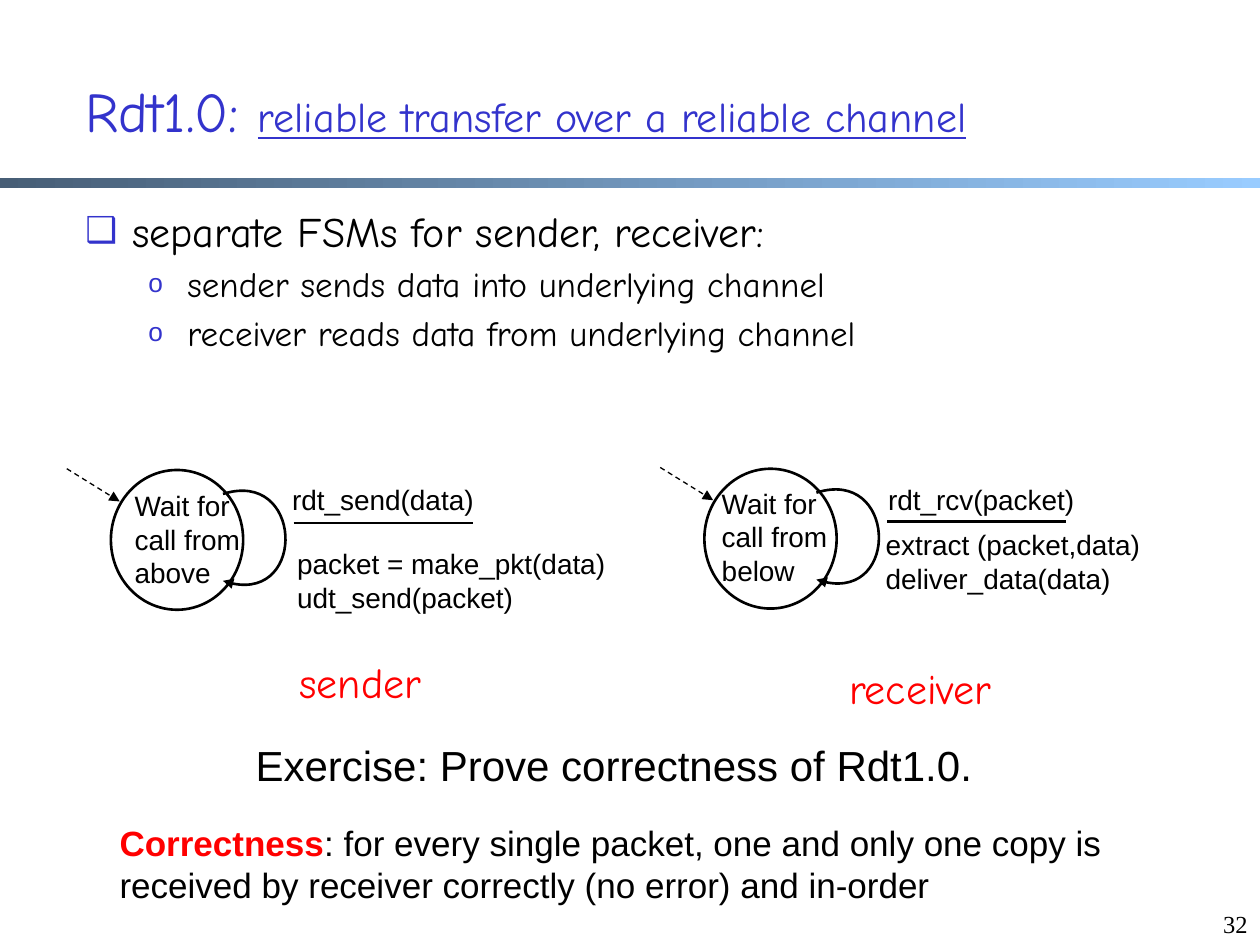
from lxml.etree import SubElement
from pptx import Presentation
from pptx.dml.color import RGBColor
from pptx.enum.dml import MSO_LINE
from pptx.enum.shapes import MSO_CONNECTOR, MSO_SHAPE
from pptx.enum.text import MSO_ANCHOR, PP_ALIGN
from pptx.oxml.ns import qn
from pptx.util import Pt

PX = 9144  # 100 px to the inch
BLACK, BLUE, RED, WHITE = "000000", "3333CC", "FF0000", "FFFFFF"
SANS, HAND, SERIF = "Arial", "Comic Neue", "Times New Roman"


def emu(*nums):
    return [n * PX for n in nums]


def color(hue):
    return RGBColor.from_string(hue)


def ink(run, size, hue=BLACK, face=SANS):
    font = run.font
    font.size, font.name = Pt(size), face
    font.color.rgb = color(hue)
    return font


def label(slide, box, text, size, hue=BLACK, face=SANS, wrap=True):
    frame = slide.shapes.add_textbox(*emu(*box)).text_frame
    frame.word_wrap = wrap
    frame.text = text
    for para in frame.paragraphs:
        for run in para.runs:
            ink(run, size, hue, face)
    return frame


def stroke(line, width, arrow=False, dash=False):
    line.color.rgb = color(BLACK)
    line.width = Pt(width)
    if dash:
        line.dash_style = MSO_LINE.DASH
    if arrow:
        SubElement(line._get_or_add_ln(), qn("a:tailEnd"), type="triangle")


def link(slide, ends, width, **style):
    wire = slide.shapes.add_connector(MSO_CONNECTOR.STRAIGHT, *emu(*ends))
    stroke(wire.line, width, **style)
    SubElement(wire._element.spPr, qn("a:effectLst"))


def loop(slide, x, y):
    """Draw a curved arrow that leaves a state and returns to it."""
    pen = slide.shapes.build_freeform(*emu(x, y))
    bends = [(63, -20), (67, 92), (0, 69)]
    pen.add_line_segments([emu(x + dx, y + dy) for dx, dy in bends], close=False)
    curve = pen.convert_to_shape()
    curve.shadow.inherit = False
    curve.fill.background()
    stroke(curve.line, 1.5, arrow=True)
    # The three points become the controls of one Bezier segment.
    trace = curve._element.find(".//" + qn("a:path"))
    cubic = SubElement(trace, qn("a:cubicBezTo"))
    for leg in trace.findall(qn("a:lnTo")):
        cubic.append(leg[0])
        trace.remove(leg)


def bullet(para, char, size, left, hang):
    props = para._p.get_or_add_pPr()
    props.set("marL", str(left * PX))
    props.set("indent", str(-hang * PX))
    tint = SubElement(props, qn("a:buClr"))
    SubElement(tint, qn("a:srgbClr"), val=BLUE)
    SubElement(props, qn("a:buSzPct"), val=str(size * 1000))
    SubElement(props, qn("a:buFont"), typeface=SANS)
    SubElement(props, qn("a:buChar"), char=char)


def header(slide, box):
    x, y, wide, high = box
    bar = slide.shapes.add_shape(MSO_SHAPE.RECTANGLE, *emu(0, y + 116, 1000, 8))
    bar.shadow.inherit = False
    bar.line.fill.background()
    bar.fill.gradient()
    bar.fill.gradient_angle = 0
    for stop, hue in zip(bar.fill.gradient_stops, ("475E76", "99CCFF")):
        stop.color.rgb = color(hue)
    frame = label(slide, box, "Rdt1.0: ", 32, BLUE, HAND)
    frame.vertical_anchor = MSO_ANCHOR.MIDDLE
    run = frame.paragraphs[0].add_run()
    run.text = "reliable transfer over a reliable channel"
    ink(run, 24, BLUE, HAND).underline = True


def points(slide, box):
    lines = [
        "separate FSMs for sender, receiver:",
        "sender sends data into underlying channel",
        "receiver reads data from underlying channel",
    ]
    frame = label(slide, box, "\n".join(lines), 20, face=HAND)
    first, *rest = frame.paragraphs
    bullet(first, "❑", 85, 37, 37)
    first.runs[0].font.size = Pt(24)
    for para in rest:
        para.level = 1
        para.space_before = Pt(4)
        bullet(para, "o", 75, 81, 31)


def machine(slide, x, y, state, event, action, role):
    """Draw a one-state FSM; each text comes with its box relative to x, y."""

    def put(part, size, hue=BLACK, face=SANS, wrap=True):
        text, (dx, dy, wide, high) = part
        label(slide, (x + dx, y + dy, wide, high), text, size, hue, face, wrap)

    disc = slide.shapes.add_shape(MSO_SHAPE.OVAL, *emu(x, y, 105, 111))
    disc.shadow.inherit = False
    disc.fill.solid()
    disc.fill.fore_color.rgb = color(WHITE)
    stroke(disc.line, 1.5)
    put(state, 16)
    loop(slide, x + 89, y + 19)
    link(slide, (x - 35, y - 1, x + 7, y + 25), 0.75, arrow=True, dash=True)
    link(slide, (x + 145, y + 42, x + 287, y + 42), 1.5)
    put(event, 16)
    put(action, 16)
    put(role, 24, RED, HAND, wrap=False)


def footer(slide, box):
    x, y, wide, high = box
    label(slide, (x + 108, y, 594, 50),
          "Exercise: Prove correctness of Rdt1.0.", 24, wrap=False)
    frame = label(slide, (x, y + 65, wide, 77), "Correctness", 20, RED)
    para = frame.paragraphs[0]
    para.runs[0].font.bold = True
    run = para.add_run()
    run.text = (": for every single packet, one and only one copy is "
                "received by receiver correctly (no error) and in-order")
    ink(run, 20)
    page = label(slide, (767, 700, 233, 50), "32", 14, face=SERIF)
    page.vertical_anchor = MSO_ANCHOR.BOTTOM
    page.paragraphs[0].alignment = PP_ALIGN.RIGHT


def main():
    deck = Presentation()
    deck.slide_width, deck.slide_height = emu(1000, 750)
    slide = deck.slides.add_slide(deck.slide_layouts[6])
    header(slide, (58, 25, 875, 125))
    points(slide, (58, 158, 864, 143))
    machine(
        slide, 88, 373,
        state=("Wait for call from above", (9, 10, 120, 100)),
        event=("rdt_send(data)", (134, 5, 247, 47)),
        action=("packet = make_pkt(data)\nudt_send(packet)", (138, 56, 293, 65)),
        role=("sender", (140, 143, 126, 50)),
    )
    machine(
        slide, 559, 372,
        state=("Wait for call from below", (4, 9, 120, 100)),
        event=("rdt_rcv(packet)", (136, 6, 169, 37)),
        action=("extract (packet,data)\ndeliver_data(data)", (134, 42, 272, 47)),
        role=("receiver", (105, 149, 149, 50)),
    )
    footer(slide, (85, 582, 849, 142))
    deck.save("out.pptx")


if __name__ == "__main__":
    main()
